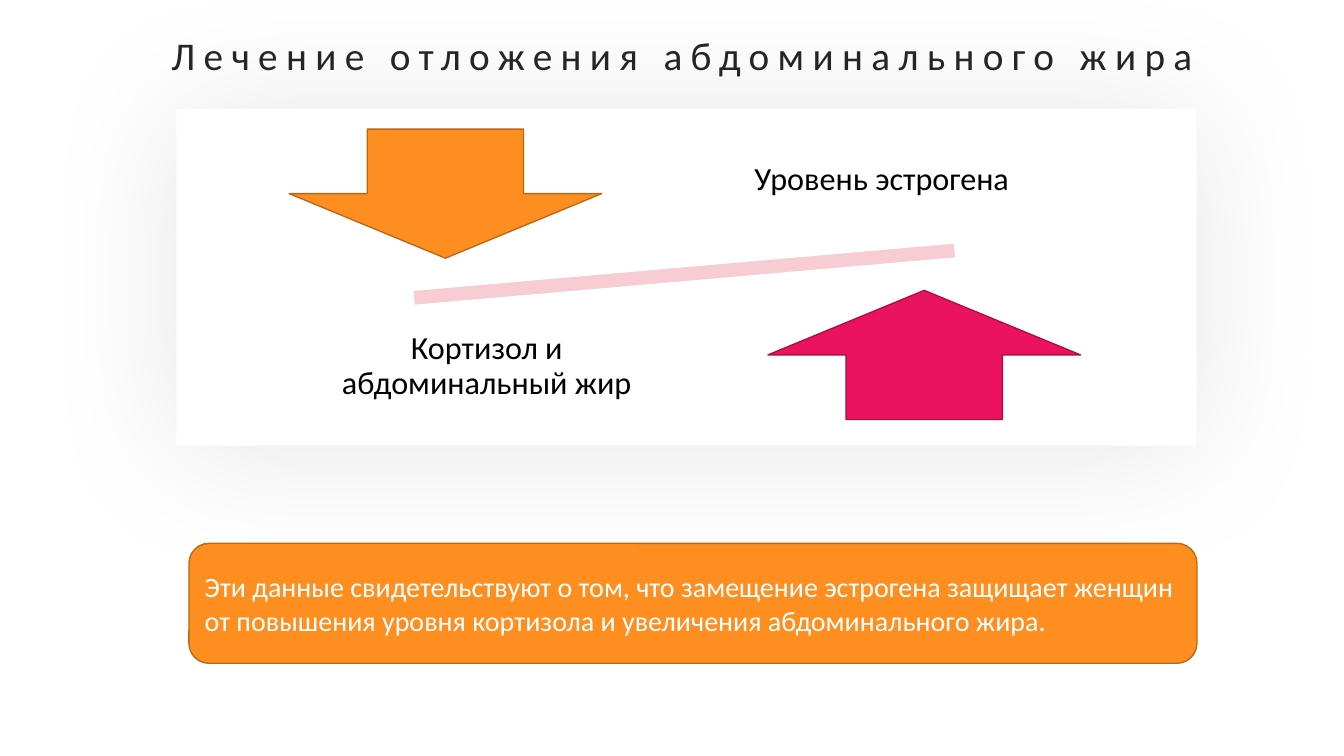
from lxml.etree import SubElement
from pptx import Presentation
from pptx.dml.color import RGBColor
from pptx.enum.shapes import MSO_SHAPE as Preset
from pptx.enum.text import MSO_ANCHOR as Anchor, MSO_AUTO_SIZE as AutoSize, PP_ALIGN as Align
from pptx.oxml.ns import qn
from pptx.util import Pt

COLORS = {
    "white": "FFFFFF", "black": "000000", "title": "262626",
    "orange": "FD8E1F", "orange edge": "BB6917",
    "crimson": "EB135E", "crimson edge": "AE0E46", "beam": "F7CCD2",
}


def add_preset(preset, box, fill, edge=None):
    shape = slide.shapes.add_shape(preset, *map(Pt, box))
    shape.shadow.inherit = False
    shape.fill.solid()
    shape.fill.fore_color.rgb = RGBColor.from_string(COLORS[fill])
    if edge:
        shape.line.color.rgb = RGBColor.from_string(COLORS[edge])
        shape.line.width = Pt(1)
    else:
        shape.line.fill.background()
    return shape


def write(shape, text, size, color, align, anchor):
    """Fill the shape with one wrapped Calibri paragraph."""
    frame = shape.text_frame
    frame.word_wrap = True
    frame.vertical_anchor = anchor
    paragraph = frame.paragraphs[0]
    paragraph.alignment = align
    run = paragraph.add_run()
    run.text = text
    for name, value in {"name": "Calibri", "size": Pt(size), "bold": False}.items():
        setattr(run.font, name, value)
    run.font.color.rgb = RGBColor.from_string(COLORS[color])
    return run


deck = Presentation()
deck.slide_width, deck.slide_height = Pt(960), Pt(540)
slide = deck.slides.add_slide(deck.slide_layouts[5])

# Title with wide letter spacing
title = slide.shapes.title
title.left, title.top, title.width, title.height = map(Pt, (115.2, 18.7, 787, 41))
heading = write(title, "Лечение отложения абдоминального жира", 28, "title", Align.LEFT, Anchor.TOP)
heading.font._element.set("spc", "600")
title.text_frame.auto_size = AutoSize.SHAPE_TO_FIT_TEXT

# White panel with a soft, wide shadow
panel = add_preset(Preset.RECTANGLE, (126, 77.8, 728.6, 240.5), "white")
effects = panel._element.spPr.find(qn("a:effectLst"))
shadow = SubElement(effects, qn("a:outerShdw"), blurRad=str(Pt(100)), dist=str(Pt(3)),
                    dir="5400000", algn="t", rotWithShape="0")
shade = SubElement(shadow, qn("a:srgbClr"), val=COLORS["black"])
SubElement(shade, qn("a:alpha"), val="10000")

# Balance: tilted beam, falling and rising arrows, their labels
beam = add_preset(Preset.MATH_MINUS, (224.6, 172.8, 528.5, 46.1), "beam", "white")
beam.rotation = -5
add_preset(Preset.DOWN_ARROW, (206.6, 92.2, 223.2, 92.2), "orange", "orange edge")
add_preset(Preset.UP_ARROW, (548.6, 207.4, 223.2, 92.2), "crimson", "crimson edge")

for label, left, top in (
    ("Уровень эстрогена", 511.2, 80.6),
    ("Кортизол и абдоминальный жир", 229, 213.8),
):
    box = slide.shapes.add_textbox(Pt(left), Pt(top), Pt(237.6), Pt(96.5))
    write(box, label, 23, "black", Align.CENTER, Anchor.MIDDLE)
    for side in ("left", "top", "right", "bottom"):
        setattr(box.text_frame, f"margin_{side}", Pt(13))
    box.text_frame.paragraphs[0].line_spacing = 0.9

# Conclusion
conclusion = add_preset(Preset.ROUNDED_RECTANGLE, (135, 388.1, 720, 85.7), "orange", "orange edge")
write(conclusion,
      "Эти данные свидетельствуют о том, что замещение эстрогена защищает женщин "
      "от повышения уровня кортизола и увеличения абдоминального жира.",
      20, "white", Align.LEFT, Anchor.MIDDLE)

deck.save("out.pptx")
